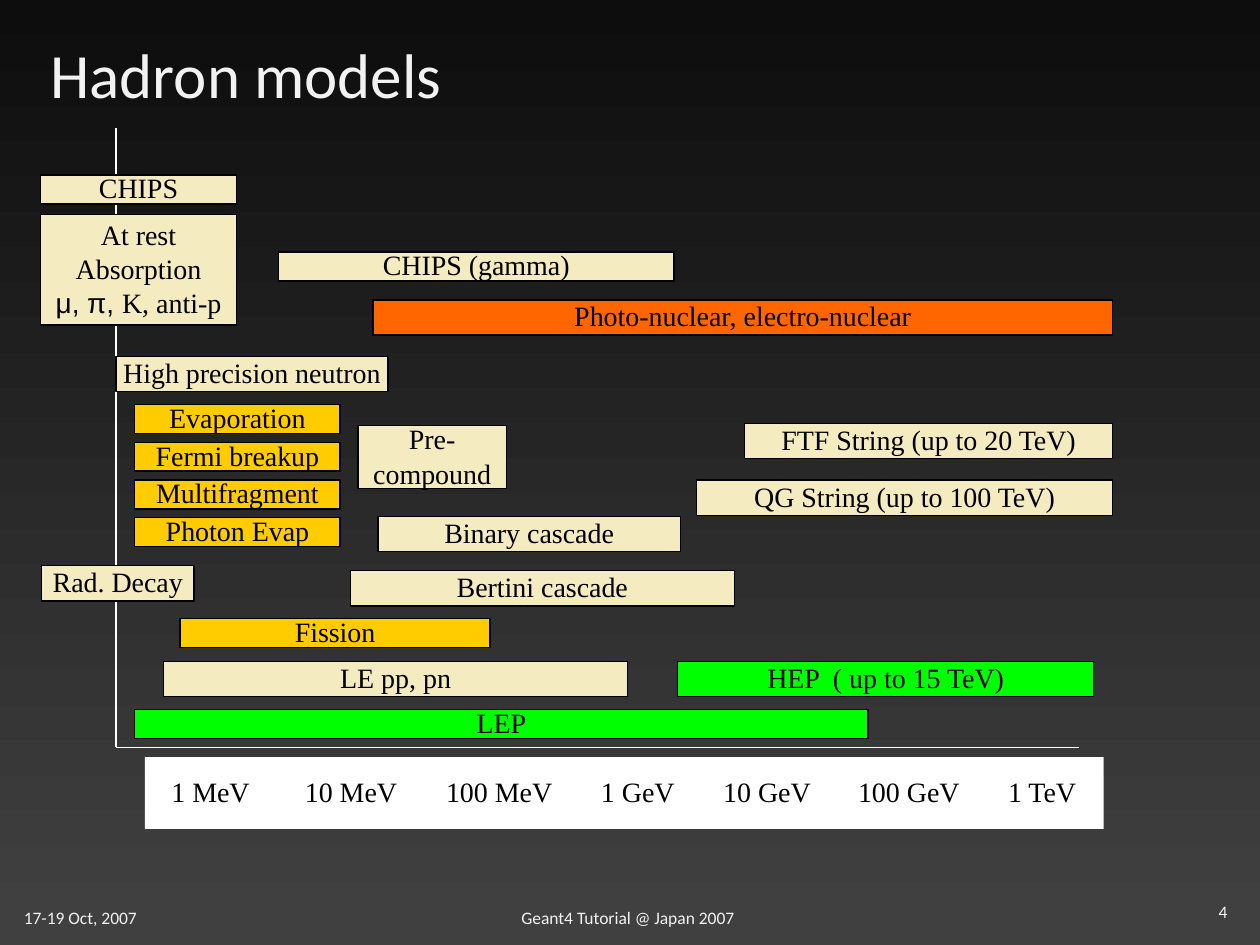
"""Build the slide that charts hadron models over their energy ranges."""
from lxml.etree import SubElement
from pptx import Presentation
from pptx.dml.color import RGBColor
from pptx.enum.shapes import MSO_CONNECTOR, MSO_SHAPE
from pptx.enum.text import MSO_ANCHOR, PP_ALIGN
from pptx.oxml.ns import qn
from pptx.util import Inches, Pt

COLORS = {"cream": "F5EBC1", "gold": "FFCC00", "green": "00FF00", "orange": "FF6600",
          "white": "FFFFFF", "black": "000000", "pale": "F2F2F2",
          "bottom": "404040", "top": "0D0D0D"}
SERIF, SANS, GREEK = "Times New Roman", "Calibri", "Arial"
THIN, NORMAL = 0.23, 0.28

MODELS = [
    ("LEP", 1.07, 5.63, 5.82, THIN, "green"),
    ("HEP  ( up to 15 TeV)", 5.38, 5.25, 3.3, NORMAL, "green"),
    ("Fission", 1.43, 4.91, 2.46, THIN, "gold"),
    ("Bertini cascade", 2.78, 4.53, 3.05, NORMAL, "cream"),
    ("Binary cascade", 3, 4.1, 2.4, NORMAL, "cream"),
    ("QG String (up to 100 TeV)", 5.53, 3.81, 3.3, NORMAL, "cream"),
    ("FTF String (up to 20 TeV)", 5.91, 3.36, 2.92, NORMAL, "cream"),
    ("Pre-\ncompound", 2.84, 3.38, 1.18, 0.5, "cream"),
    ("High precision neutron", 0.92, 2.83, 2.16, NORMAL, "cream"),
    ("At rest\nAbsorption\nμ, π, |K, anti-p", 0.32, 1.7, 1.56, 0.88, "cream"),
    ("Photo-nuclear, electro-nuclear", 2.96, 2.38, 5.87, NORMAL, "orange"),
    ("CHIPS (gamma)", 2.21, 2, 3.14, THIN, "cream"),
    ("CHIPS", 0.32, 1.39, 1.56, THIN, "cream"),
    ("LE pp, pn", 1.3, 5.25, 3.68, NORMAL, "cream"),
    ("Rad. Decay", 0.33, 4.49, 1.21, NORMAL, "cream"),
]
DE_EXCITATION = ["Evaporation", "Fermi breakup", "Multifragment", "Photon Evap"]
DE_EXCITATION_TOP, DE_EXCITATION_STEP = 3.21, 0.3
ENERGIES = ["1 MeV", "10 MeV", "100 MeV", "1 GeV", "10 GeV", "100 GeV", "1 TeV"]
ENERGY_TABS = [1.06, 2.18, 3.41, 4.38, 5.45, 6.64]
AXES = [(0.92, 1.02, 0.92, 5.93), (0.92, 5.93, 8.56, 5.93)]
FOOTERS = [
    ("17-19 Oct, 2007", 0.09, 7.15, 1.12, 0.27, PP_ALIGN.LEFT),
    ("Geant4 Tutorial @ Japan 2007", 4.04, 7.15, 1.93, 0.27, PP_ALIGN.LEFT),
    ("4", 7.51, 7.1, 2.33, 0.4, PP_ALIGN.RIGHT),
]


def color(name):
    return RGBColor.from_string(COLORS[name])


def add_span(para, text, size, font, color_name):
    span = para.add_run()
    span.text = text
    span.font.size = Pt(size)
    span.font.name = font
    span.font.color.rgb = color(color_name)


def add_box(page, left, top, width, height, fill):
    box = page.shapes.add_shape(MSO_SHAPE.RECTANGLE, Inches(left), Inches(top),
                                Inches(width), Inches(height))
    box.shadow.inherit = False
    box.fill.solid()
    box.fill.fore_color.rgb = color(fill)
    frame = box.text_frame
    frame.margin_left = frame.margin_right = frame.margin_top = frame.margin_bottom = 0
    frame.vertical_anchor = MSO_ANCHOR.MIDDLE
    frame.word_wrap = False
    return box


def add_model(page, label, left, top, width, height, fill):
    box = add_box(page, left, top, width, height, fill)
    box.line.color.rgb = color("black")
    box.line.width = Pt(0.75)
    frame = box.text_frame
    for index, line in enumerate(label.split("\n")):
        para = frame.add_paragraph() if index else frame.paragraphs[0]
        para.alignment = PP_ALIGN.CENTER
        para.line_spacing = 1.0 if index else 0.93
        greek, _, latin = line.rpartition("|")
        if greek:
            add_span(para, greek, 16, GREEK, "black")
        add_span(para, latin, 16, SERIF, "black")


def add_energy_scale(page):
    box = add_box(page, 1.15, 6.01, 7.61, 0.57, "white")
    box.line.fill.background()
    box.text_frame.margin_left = Inches(0.21)
    box.text_frame.word_wrap = True
    para = box.text_frame.paragraphs[0]
    para.alignment = PP_ALIGN.LEFT
    para.line_spacing = 0.93
    tabs = SubElement(para._p.get_or_add_pPr(), qn("a:tabLst"))
    for position in ENERGY_TABS:
        SubElement(tabs, qn("a:tab"), pos=str(Inches(position)), algn="l")
    add_span(para, "\t".join(ENERGIES), 16, SERIF, "black")


def add_axis(page, *ends):
    axis = page.shapes.add_connector(MSO_CONNECTOR.STRAIGHT, *map(Inches, ends))
    axis.line.color.rgb = color("white")
    axis.line.width = Pt(0.75)
    SubElement(axis._element.spPr, qn("a:effectLst"))


def add_footer(page, text, left, top, width, height, alignment):
    box = page.shapes.add_textbox(Inches(left), Inches(top), Inches(width), Inches(height))
    box.text_frame.word_wrap = alignment == PP_ALIGN.RIGHT
    para = box.text_frame.paragraphs[0]
    para.alignment = alignment
    add_span(para, text, 10, SANS, "pale")


def add_title(page, text):
    title = page.shapes.title
    title.left, title.top, title.width, title.height = map(Inches, (0.3, 0.22, 9, 0.72))
    title.text_frame.vertical_anchor = MSO_ANCHOR.MIDDLE
    para = title.text_frame.paragraphs[0]
    para.alignment = PP_ALIGN.LEFT
    add_span(para, text, 36, SANS, "pale")


def paint_background(page):
    fill = page.background.fill
    fill.gradient()
    fill.gradient_angle = 90
    for stop, name, position in zip(fill.gradient_stops, ("bottom", "top"), (0.03, 1)):
        stop.color.rgb = color(name)
        stop.position = position


def main():
    deck = Presentation()
    deck.slide_width, deck.slide_height = Inches(10), Inches(7.5)
    page = deck.slides.add_slide(deck.slide_layouts[5])
    paint_background(page)
    add_title(page, "Hadron models")
    for axis in AXES:
        add_axis(page, *axis)
    add_energy_scale(page)
    for model in MODELS:
        add_model(page, *model)
    for row, label in enumerate(DE_EXCITATION):
        top = DE_EXCITATION_TOP + row * DE_EXCITATION_STEP
        add_model(page, label, 1.07, top, 1.63, THIN, "gold")
    for footer in FOOTERS:
        add_footer(page, *footer)
    deck.save("out.pptx")


if __name__ == "__main__":
    main()
